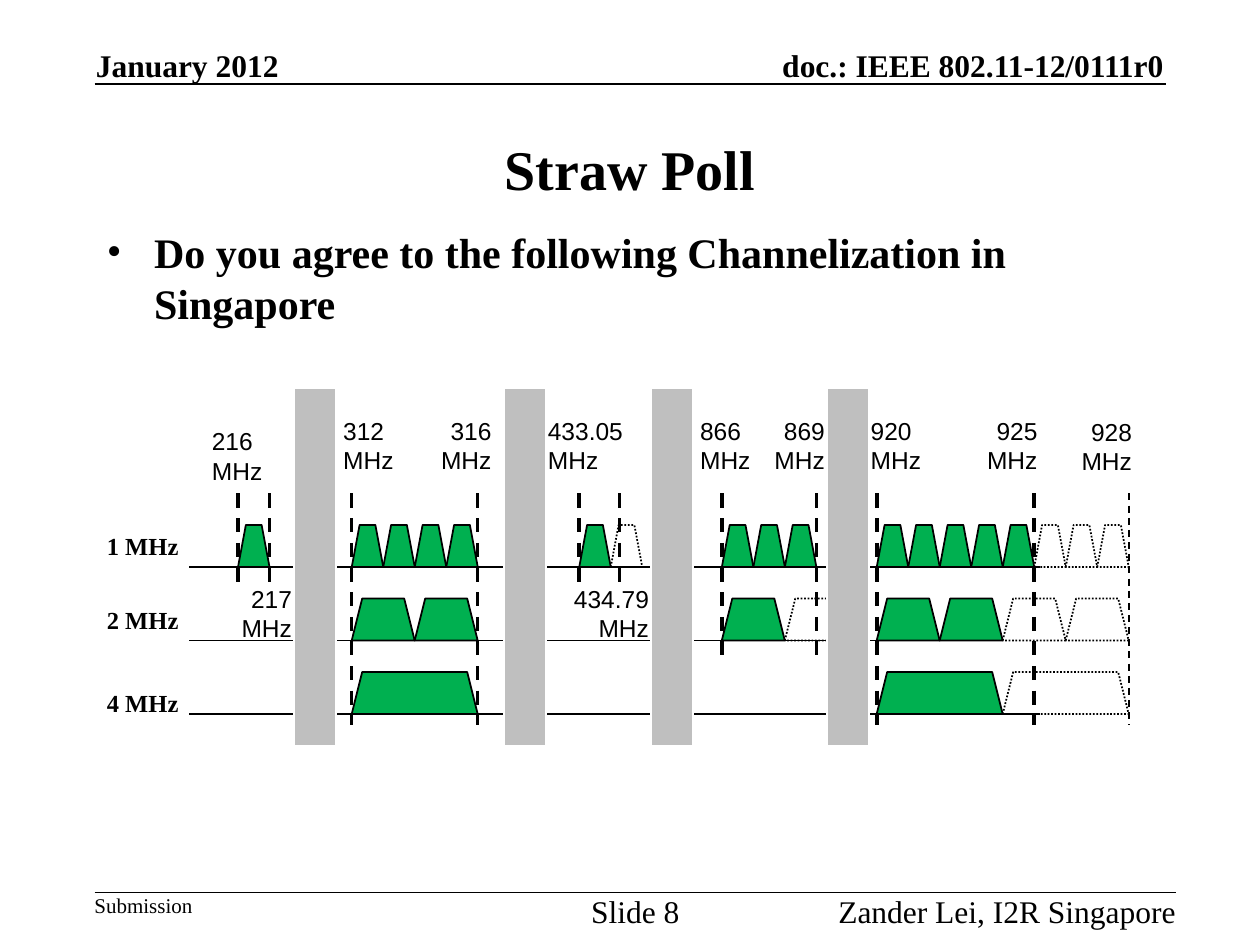
from dataclasses import dataclass

from lxml.etree import SubElement
from pptx import Presentation
from pptx.dml.color import RGBColor
from pptx.enum.dml import MSO_LINE
from pptx.enum.shapes import MSO_CONNECTOR, MSO_SHAPE
from pptx.enum.text import MSO_ANCHOR as Anchor, PP_ALIGN as Align
from pptx.oxml.ns import qn
from pptx.util import Pt


@dataclass(frozen=True)
class Theme:
    ink: RGBColor = RGBColor(0, 0, 0)
    paper: RGBColor = RGBColor(255, 255, 255)
    channel: RGBColor = RGBColor(0x00, 0xB0, 0x50)
    divider: RGBColor = RGBColor(0xBF, 0xBF, 0xBF)
    serif: str = "Times New Roman"
    sans: str = "Arial"
    title: int = 32
    body: int = 24
    running: int = 18
    label: int = 14
    small: int = 12


THEME = Theme()


@dataclass(frozen=True)
class Band:
    """channels holds (solid, dotted) counts for the 1, 2 and 4 MHz rows."""
    left: float
    width: float
    edge_bottom: float
    channels: tuple


MHZ = 18
CHANNEL_HEIGHT = 24
ROW_TOPS = (300, 342, 384)
ROW_MHZ = (1, 2, 4)
EDGE_TOP = 282

BANDS = (
    Band(136, MHZ, 336, ((1, 0),)),
    Band(201, 4 * MHZ, 414, ((4, 0), (2, 0), (1, 0))),
    Band(331, 23, 336, ((1, 1),)),
    Band(412.5, 3 * MHZ, 378, ((3, 0), (1, 1))),
    Band(501, 5 * MHZ, 414, ((5, 3), (2, 2), (1, 1))),
)
DIVIDERS = (168, 288, 372, 472.5)
FREQUENCIES = (  # text, left, top, width, alignment
    ("216", 114, 240, 44, Align.LEFT),
    ("217", 130, 330, 44, Align.RIGHT),
    ("312", 189, 234, 44, Align.LEFT),
    ("316", 244, 234, 44, Align.RIGHT),
    ("433.05", 306, 234, 57.5, Align.LEFT),
    ("434.79", 320.5, 330, 57.5, Align.RIGHT),
    ("866", 393, 234, 44, Align.LEFT),
    ("869", 434.5, 234, 44, Align.RIGHT),
    ("920", 490.5, 234, 44, Align.LEFT),
    ("925", 556, 234, 44, Align.RIGHT),
    ("928", 610, 234.5, 44, Align.RIGHT),
)


def add_text(page, text, left, top, width, height, *, size, font=THEME.serif,
             bold=False, align=Align.LEFT, anchor=Anchor.TOP, wrap=False,
             inset=(7.2, 3.6), bullet=None):
    box = page.shapes.add_textbox(Pt(left), Pt(top), Pt(width), Pt(height))
    frame = box.text_frame
    frame.word_wrap = wrap
    frame.vertical_anchor = anchor
    frame.margin_left = frame.margin_right = Pt(inset[0])
    frame.margin_top = frame.margin_bottom = Pt(inset[1])
    para = frame.paragraphs[0]
    para.text = text
    para.alignment = align
    if bullet:
        props = para._p.get_or_add_pPr()
        props.set("marL", str(Pt(27)))
        props.set("indent", str(-Pt(27)))
        SubElement(props, qn("a:buFont"), typeface=THEME.serif)
        SubElement(props, qn("a:buChar"), char=bullet)
    for span in para.runs:
        span.font.size = Pt(size)
        span.font.name = font
        span.font.bold = bold
        span.font.color.rgb = THEME.ink
    return box


def add_line(page, start, end, weight=1, dash=None):
    line = page.shapes.add_connector(
        MSO_CONNECTOR.STRAIGHT, *(Pt(value) for value in (*start, *end)))
    line.line.color.rgb = THEME.ink
    line.line.width = Pt(weight)
    if dash:
        line.line.dash_style = dash
    SubElement(line._element.spPr, qn("a:effectLst"))


def add_block(page, kind, left, top, width, height, fill, outline, dash=None):
    shape = page.shapes.add_shape(kind, Pt(left), Pt(top), Pt(width), Pt(height))
    shape.shadow.inherit = False
    if fill is None:
        shape.fill.background()
    else:
        shape.fill.solid()
        shape.fill.fore_color.rgb = fill
    shape.line.color.rgb = outline
    shape.line.width = Pt(1)
    if dash:
        shape.line.dash_style = dash


def add_header(page, left, top, width, height):
    style = dict(size=THEME.running, bold=True, anchor=Anchor.BOTTOM, inset=(0, 0))
    add_text(page, "January 2012", left + 0.75, top, 106, height, **style)
    add_text(page, "doc.: IEEE 802.11-12/0111r0", left + width - 257, top, 256, height,
             align=Align.RIGHT, **style)
    add_line(page, (left, top + height), (left + width, top + height))


def add_footer(page, left, top, width, height):
    add_line(page, (left, top), (left + width, top))
    add_text(page, "Submission", left, top, 56, height, size=THEME.small, inset=(0, 0))
    add_text(page, "Slide 8", left + 279, top, 60, height, size=THEME.running,
             align=Align.CENTER, wrap=True, inset=(0, 0))
    add_text(page, "Zander Lei, I2R Singapore", left + width - 210, top, 210, height,
             size=THEME.running, align=Align.RIGHT, wrap=True, inset=(0, 0))


def add_band(page, band):
    for edge in (band.left, band.left + band.width):
        add_line(page, (edge, EDGE_TOP), (edge, band.edge_bottom), 2, MSO_LINE.DASH)
    for (solid, dotted), top, mhz in zip(band.channels, ROW_TOPS, ROW_MHZ):
        width = mhz * MHZ
        for index in range(solid + dotted):
            used = index < solid
            add_block(page, MSO_SHAPE.TRAPEZOID, band.left + index * width, top,
                      width, CHANNEL_HEIGHT, THEME.channel if used else None,
                      THEME.ink, None if used else MSO_LINE.ROUND_DOT)


def add_channel_plan(page, left, top, width, height):
    limit = left + width
    add_line(page, (limit, EDGE_TOP), (limit, 414), 1, MSO_LINE.DASH)
    for band in BANDS:
        add_band(page, band)
    for mhz, label_top in zip(ROW_MHZ, (300, 342, 389.5)):
        add_text(page, f"{mhz} MHz", left, label_top, 56, 24.5,
                 size=THEME.label, bold=True)
    for row_top, end in zip(ROW_TOPS, (594, 573, 594)):
        base = row_top + CHANNEL_HEIGHT
        add_line(page, (left + 54, base), (end, base))
    for text, label_left, label_top, label_width, align in FREQUENCIES:
        add_text(page, f"{text}\vMHz", label_left, label_top, label_width, 41,
                 size=THEME.label, font=THEME.sans, align=align)
    for divider in DIVIDERS:
        add_block(page, MSO_SHAPE.RECTANGLE, divider, top, 24, height,
                  THEME.divider, THEME.paper)


def main():
    deck = Presentation()
    deck.slide_width, deck.slide_height = Pt(720), Pt(540)
    page = deck.slides.add_slide(deck.slide_layouts[6])
    add_header(page, 54, 26, 612, 22)
    add_footer(page, 54, 510, 618, 22)
    add_text(page, "Straw Poll", 54, 54, 612, 84, size=THEME.title, bold=True,
             align=Align.CENTER, anchor=Anchor.MIDDLE, wrap=True)
    add_text(page, "Do you agree to the following Channelization in Singapore",
             54, 126, 612, 80, size=THEME.body, bold=True, wrap=True, bullet="•")
    add_channel_plan(page, 54, 222, 591, 204)
    deck.save("out.pptx")


if __name__ == "__main__":
    main()
